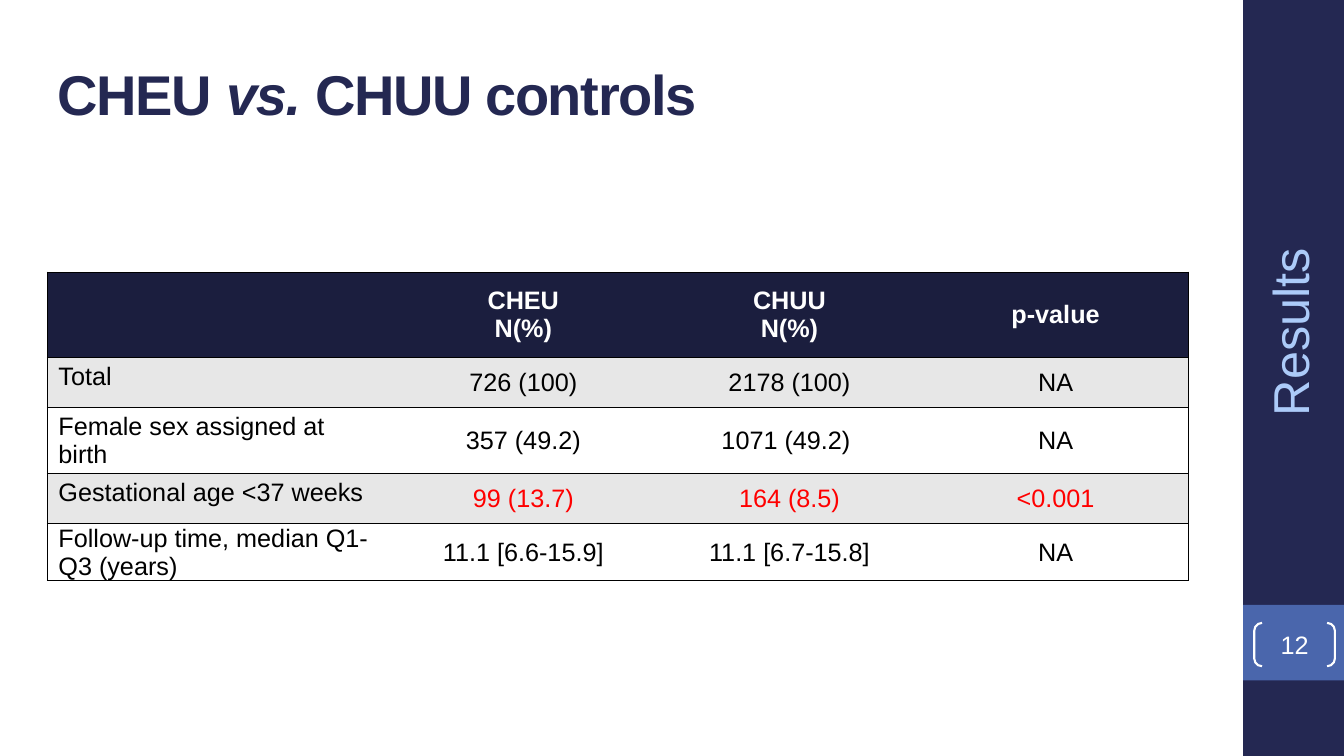
"""Build the slide comparing CHEU children with CHUU controls."""
from dataclasses import dataclass

from lxml.etree import SubElement
from pptx import Presentation
from pptx.dml.color import RGBColor
from pptx.enum.shapes import MSO_SHAPE
from pptx.enum.text import MSO_ANCHOR, MSO_AUTO_SIZE, PP_ALIGN
from pptx.oxml.ns import qn
from pptx.util import Inches, Pt

NAVY = RGBColor(0x24, 0x28, 0x52)
HEADER_NAVY = RGBColor(0x1B, 0x1E, 0x3E)
BLUE = RGBColor(0x4A, 0x66, 0xAC)
LIGHT_BLUE = RGBColor(0xAC, 0xCB, 0xF9)
GREY = RGBColor(0xE7, 0xE7, 0xE7)
WHITE = RGBColor(0xFF, 0xFF, 0xFF)
BLACK = RGBColor(0x00, 0x00, 0x00)
RED = RGBColor(0xFF, 0x00, 0x00)
FONT = "Arial"
COLUMN_WIDTHS = (3.4, 2.64, 2.64, 2.64)


@dataclass(frozen=True)
class Panel:
    top: float
    height: float
    color: RGBColor


@dataclass(frozen=True)
class Row:
    texts: tuple[str, ...]
    fill: RGBColor
    value_color: RGBColor = BLACK
    height: float = 0.49
    bold: bool = False
    tight: bool = False


PANELS = (Panel(0, 7.5, NAVY), Panel(6, 0.75, BLUE))
ROWS = (
    Row(("", "CHEU\vN(%)", "CHUU\nN(%)", "p-value"), HEADER_NAVY, WHITE, height=0.85, bold=True),
    Row(("Total", "726 (100)", "2178 (100)", "NA"), GREY),
    Row(("Female sex assigned at birth", "357 (49.2)", "1071 (49.2) ", "NA"), WHITE),
    Row(("Gestational age <37 weeks", "99 (13.7)", "164 (8.5)", "<0.001"), GREY, RED),
    Row(("Follow-up time, median Q1-Q3 (years)", "11.1 [6.6-15.9]", "11.1 [6.7-15.8]", "NA"),
        WHITE, tight=True),
)


def format_text(text_frame, size: float, color: RGBColor, bold: bool = False,
                alignment: PP_ALIGN = PP_ALIGN.CENTER) -> None:
    """Apply one font and alignment to all text in a frame."""
    for paragraph in text_frame.paragraphs:
        paragraph.alignment = alignment
        for run in paragraph.runs:
            run.font.name = FONT
            run.font.size = Pt(size)
            run.font.bold = bold
            run.font.color.rgb = color


def add_panel(slide, panel: Panel) -> None:
    """Draw one block of the right-hand sidebar."""
    shape = slide.shapes.add_shape(MSO_SHAPE.RECTANGLE, Inches(12.33), Inches(panel.top),
                                   Inches(1), Inches(panel.height))
    shape.shadow.inherit = False
    shape.fill.solid()
    shape.fill.fore_color.rgb = panel.color
    shape.line.fill.background()


def add_title(slide) -> None:
    """Fill the title placeholder, with the middle word in italics."""
    title = slide.shapes.title
    title.left, title.top = Inches(0.47), Inches(0.3)
    title.width, title.height = Inches(11.11), Inches(1.25)
    text_frame = title.text_frame
    text_frame.auto_size = MSO_AUTO_SIZE.NONE
    text_frame.vertical_anchor = MSO_ANCHOR.MIDDLE
    paragraph = text_frame.paragraphs[0]
    for text in ("CHEU ", "vs.", " CHUU controls"):
        run = paragraph.add_run()
        run.text = text
        run.font.italic = text == "vs."
        run.font._element.set("spc", "-100")
    format_text(text_frame, 40, NAVY, bold=True, alignment=PP_ALIGN.LEFT)


def set_borders(cell, is_first: bool, is_last: bool) -> None:
    """Rule a cell above and below, and at the table's outer sides."""
    properties = cell._tc.get_or_add_tcPr()
    for side, visible in (("L", is_first), ("R", is_last), ("T", True), ("B", True)):
        line = SubElement(properties, qn(f"a:ln{side}"), w=str(Pt(1) if visible else 0))
        if visible:
            fill = SubElement(line, qn("a:solidFill"))
            SubElement(fill, qn("a:srgbClr"), val=str(BLACK))
        else:
            SubElement(line, qn("a:noFill"))


def fill_cell(cell, row: Row, column: int) -> None:
    """Write and format one table cell."""
    is_label = column == 0
    cell.text_frame.text = row.texts[column]
    format_text(cell.text_frame, 18, BLACK if is_label else row.value_color, row.bold,
                PP_ALIGN.LEFT if is_label else PP_ALIGN.CENTER)
    if row.tight:
        cell.margin_left = cell.margin_top = cell.margin_right = Inches(0.01)
        cell.margin_bottom = 0
    if is_label:
        indent = Inches(0.1 if row.tight else 0.01)
        cell.text_frame.paragraphs[0]._p.get_or_add_pPr().set("marL", str(indent))
    top_aligned = is_label and not row.tight
    cell.vertical_anchor = MSO_ANCHOR.TOP if top_aligned else MSO_ANCHOR.MIDDLE
    set_borders(cell, is_label, column == len(COLUMN_WIDTHS) - 1)
    cell.fill.solid()
    cell.fill.fore_color.rgb = row.fill


def add_results_table(slide) -> None:
    """Add the comparison table."""
    frame = slide.shapes.add_table(len(ROWS), len(COLUMN_WIDTHS), Inches(0.47), Inches(2.7),
                                   Inches(sum(COLUMN_WIDTHS)),
                                   Inches(sum(row.height for row in ROWS)))
    table = frame.table
    table.horz_banding = False
    for column, width in enumerate(COLUMN_WIDTHS):
        table.columns[column].width = Inches(width)
    for index, row in enumerate(ROWS):
        table.rows[index].height = Inches(row.height)
        for column in range(len(COLUMN_WIDTHS)):
            fill_cell(table.cell(index, column), row, column)


def add_section_label(slide) -> None:
    """Add the section name, reading upwards in the sidebar."""
    label = slide.shapes.add_textbox(Inches(10.16), Inches(3.03), Inches(5.25), Inches(0.53))
    label.rotation = 270
    text_frame = label.text_frame
    text_frame.word_wrap = True
    text_frame.vertical_anchor = MSO_ANCHOR.MIDDLE
    text_frame.text = "Results"
    format_text(text_frame, 36, LIGHT_BLUE)


def add_page_number(slide) -> None:
    """Add the bracketed page number."""
    bracket = slide.shapes.add_shape(MSO_SHAPE.DOUBLE_BRACKET, Inches(12.44), Inches(6.18),
                                     Inches(0.8), Inches(0.43))
    bracket.shadow.inherit = False
    bracket.adjustments[0] = 0.18
    bracket.fill.background()
    bracket.line.color.rgb = WHITE
    bracket.line.width = Pt(1.5)
    text_frame = bracket.text_frame
    text_frame.margin_left = text_frame.margin_right = 0
    text_frame.margin_top = text_frame.margin_bottom = 0
    text_frame.vertical_anchor = MSO_ANCHOR.MIDDLE
    text_frame.text = "12"
    format_text(text_frame, 18, WHITE)


def main() -> None:
    """Build and save the presentation."""
    presentation = Presentation()
    presentation.slide_width, presentation.slide_height = Inches(13.33), Inches(7.5)
    slide = presentation.slides.add_slide(presentation.slide_layouts[5])
    for panel in PANELS:
        add_panel(slide, panel)
    add_title(slide)
    add_results_table(slide)
    add_section_label(slide)
    add_page_number(slide)
    presentation.save("out.pptx")


if __name__ == "__main__":
    main()
